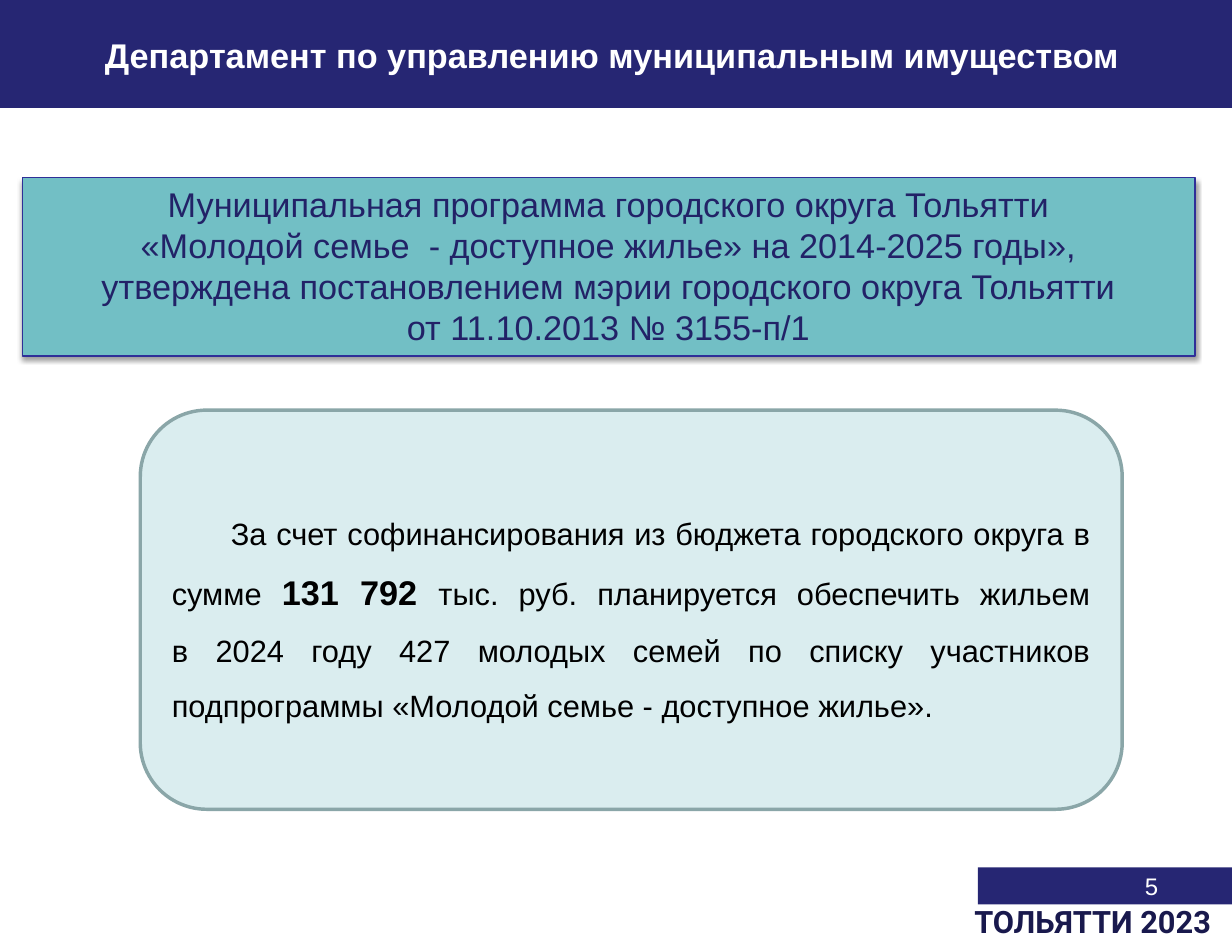
from lxml import etree
from pptx import Presentation
from pptx.dml.color import RGBColor
from pptx.enum.shapes import MSO_SHAPE
from pptx.enum.text import MSO_ANCHOR, PP_ALIGN
from pptx.oxml import parse_xml
from pptx.util import Pt

NAVY = "262673"
SHADOW = (
    '<a:effectLst xmlns:a="http://schemas.openxmlformats.org/drawingml/2006/main">'
    '<a:outerShdw blurRad="40000" dist="20000" dir="5400000" rotWithShape="0">'
    '<a:srgbClr val="000000"><a:alpha val="38000"/></a:srgbClr>'
    '</a:outerShdw></a:effectLst>'
)


def style_font(font, size, color, bold=False, name="Arial"):
    font.name = name
    font.size = Pt(size)
    font.bold = bold
    font.color.rgb = RGBColor.from_string(color)


def add_box(kind, left, top, width, height, fill, line=None, line_width=0):
    shape = slide.shapes.add_shape(kind, Pt(left), Pt(top), Pt(width), Pt(height))
    shape.shadow.inherit = False
    shape.fill.solid()
    shape.fill.fore_color.rgb = RGBColor.from_string(fill)
    if line:
        shape.line.color.rgb = RGBColor.from_string(line)
        shape.line.width = Pt(line_width)
    else:
        shape.line.fill.background()
    return shape


presentation = Presentation()
presentation.slide_width = Pt(720)
presentation.slide_height = Pt(555.84)
slide = presentation.slides.add_slide(presentation.slide_layouts[6])

# Footer: page number on a band, city and year below
add_box(MSO_SHAPE.RECTANGLE, 571.5, 507, 148.5, 21.6, NAVY)
footers = [
    ("5", 516.24, 506.16, 167.76, 38.88, PP_ALIGN.RIGHT, 1, 14, "FFFFFF", False, "Arial"),
    ("ТОЛЬЯТТИ 2023", 562.32, 528.48, 159.12, 25.2, PP_ALIGN.LEFT, 0.8, 18, "19194D", True, "Roboto"),
]
for text, left, top, width, height, alignment, spacing, size, color, bold, name in footers:
    text_box = slide.shapes.add_textbox(Pt(left), Pt(top), Pt(width), Pt(height))
    text_box.text_frame.word_wrap = True
    text_box.text_frame.text = text
    paragraph = text_box.text_frame.paragraphs[0]
    paragraph.alignment = alignment
    paragraph.line_spacing = spacing
    style_font(paragraph.runs[0].font, size, color, bold, name)

# Department header
header = add_box(MSO_SHAPE.RECTANGLE, 0, 0, 720, 63.1, NAVY)
header_frame = header.text_frame
header_frame.margin_left = Pt(7.2)
header_frame.margin_right = Pt(11.5)
header_frame.margin_top = Pt(8.64)
header_frame.vertical_anchor = MSO_ANCHOR.MIDDLE
header_frame.text = "Департамент по управлению муниципальным имуществом"
paragraph = header_frame.paragraphs[0]
paragraph.alignment = PP_ALIGN.CENTER
paragraph.line_spacing = 0.8
style_font(paragraph.runs[0].font, 20, "FFFFFF", bold=True)

# Programme name
programme = add_box(MSO_SHAPE.RECTANGLE, 12.96, 103.68, 685.44, 104.4, "72BFC5", "2F2F98", 0.75)
properties = programme.fill._xPr
properties.remove(properties.find("{*}effectLst"))
properties.append(parse_xml(SHADOW))
programme_frame = programme.text_frame
programme_frame.vertical_anchor = MSO_ANCHOR.TOP
programme_frame.text = "\n".join([
    "Муниципальная программа городского округа Тольятти",
    "«Молодой семье  - доступное жилье» на 2014-2025 годы»,",
    "утверждена постановлением мэрии городского округа Тольятти",
    "от 11.10.2013 № 3155-п/1",
])
for paragraph in programme_frame.paragraphs:
    paragraph.alignment = PP_ALIGN.CENTER
    style_font(paragraph.runs[0].font, 20, "222267")

# Funding statement
funding = add_box(MSO_SHAPE.ROUNDED_RECTANGLE, 82, 239.76, 573.84, 233.28, "DAEDEF", "8AA6A8", 2)
funding.text_frame.vertical_anchor = MSO_ANCHOR.MIDDLE
paragraph = funding.text_frame.paragraphs[0]
paragraph.alignment = PP_ALIGN.JUSTIFY
paragraph.line_spacing = 1.5
paragraph._p.get_or_add_pPr().set("indent", str(Pt(34.5)))
for part in [
    ("За счет софинансирования из бюджета городского округа в сумме ", 18, False),
    ("131 792 ", 20, True),
    ("тыс. руб. планируется обеспечить жильем", 18, False),
    None,
    ("в 2024 году 427 молодых семей по списку участников "
     "подпрограммы «Молодой семье - доступное жилье».", 18, False),
]:
    if part is None:
        paragraph.add_line_break()
        continue
    text, size, bold = part
    run = paragraph.add_run()
    run.text = text
    style_font(run.font, size, "000000", bold)

presentation.save("out.pptx")
